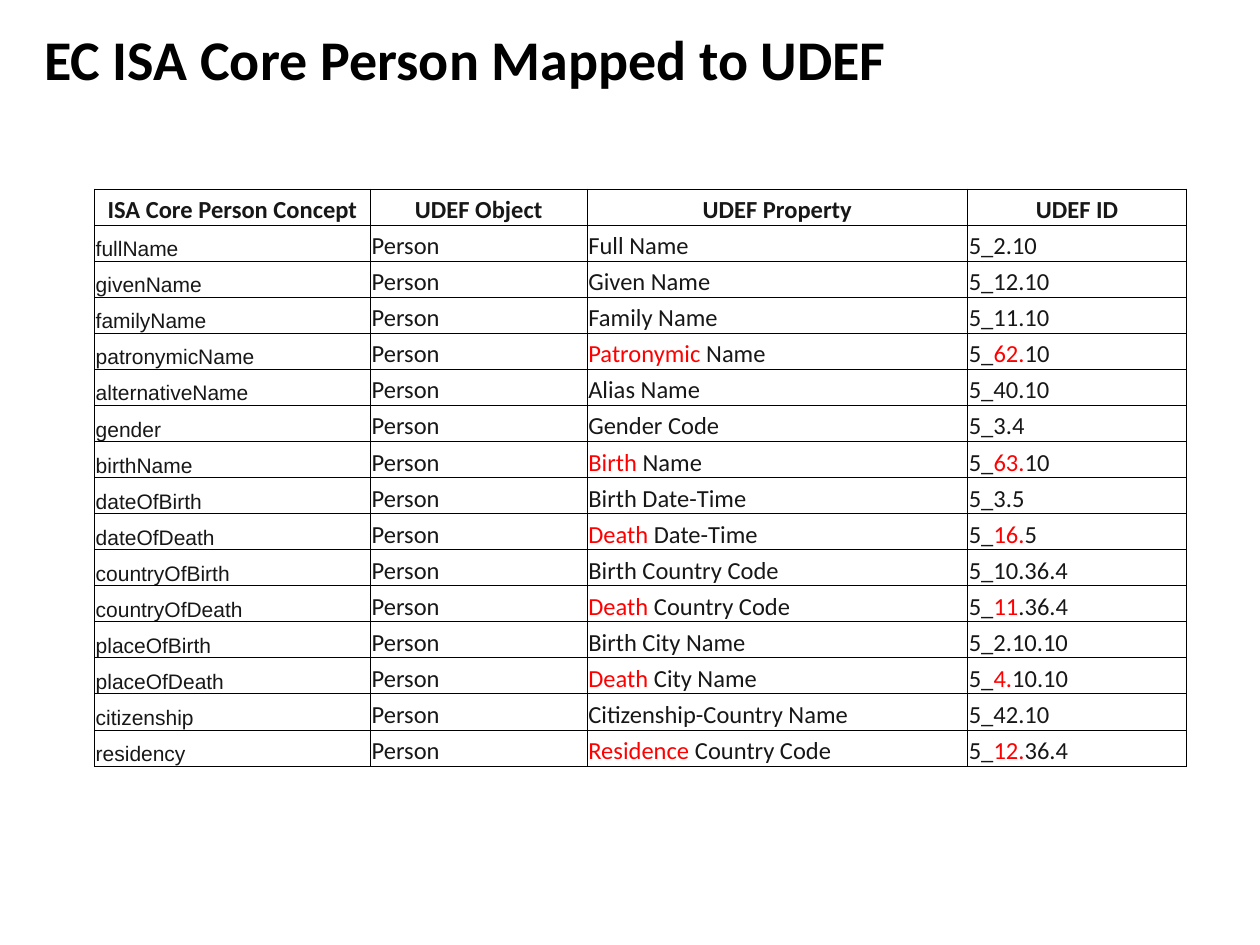
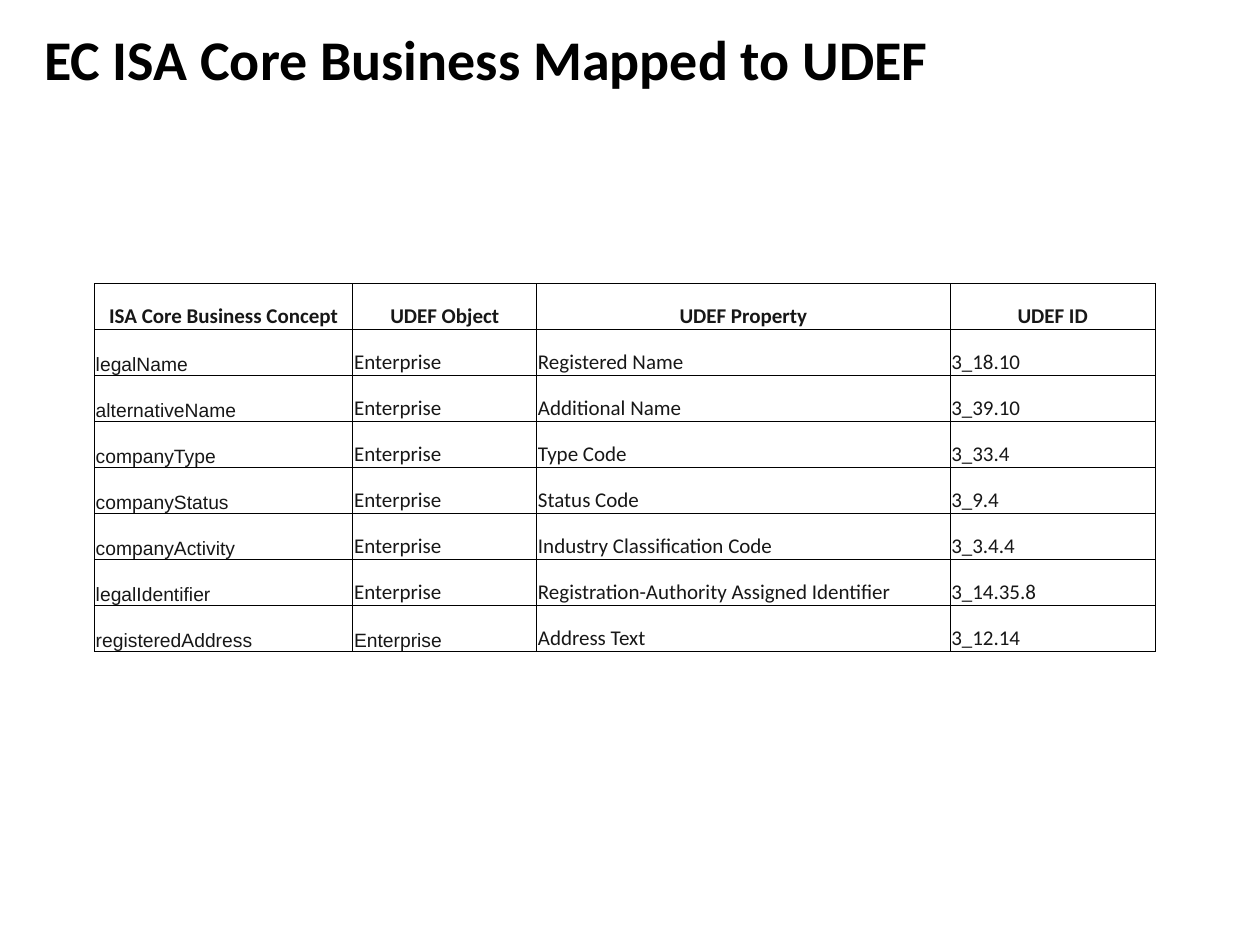
"""Build two slides that map ISA core vocabularies to UDEF."""
from dataclasses import dataclass

from lxml.etree import SubElement as Sub
from pptx import Presentation
from pptx.dml.color import RGBColor
from pptx.enum.text import MSO_ANCHOR as Anchor, PP_ALIGN as Align
from pptx.oxml.ns import qn
from pptx.util import Inches, Pt

WIDE, HIGH = Inches(10), Inches(7.5)
BLACK = RGBColor(0, 0, 0)
INK = RGBColor(0x17, 0x17, 0x17)
RED = RGBColor(0xFF, 0, 0)
WHITE = RGBColor(0xFF, 0xFF, 0xFF)
HEAD, CODE = "Calibri", "Arial"
CELL = {
    "vertical_anchor": Anchor.BOTTOM,
    "margin_left": Inches(0.01),
    "margin_right": Inches(0.01),
    "margin_top": Inches(0.01),
    "margin_bottom": 0,
}


@dataclass(frozen=True)
class Map:
    """A mapping table; lengths are percentages of the slide's size."""
    topic: str
    thing: str
    top: float
    row: float
    cols: tuple[float, ...]
    size: int
    small: int
    rows: tuple[tuple[str, str, str], ...]
    odd: tuple[tuple[int, int], ...] = ()

    def grid(self) -> list[tuple[str, ...]]:
        """Return the header and body as rows of four texts."""
        head = (f"ISA Core {self.topic} Concept", "UDEF Object", "UDEF Property", "UDEF ID")
        return [head] + [(name, self.thing, prop, code) for name, prop, code in self.rows]


MAPS = (
    Map("Person", "Person", 20, 3.82, (21.9, 17.2, 30.2, 17.4), 14, 12, (
        ("fullName", "Full Name", "5_2.10"),
        ("givenName", "Given Name", "5_12.10"),
        ("familyName", "Family Name", "5_11.10"),
        ("patronymicName", "[Patronymic] Name", "5_[62.]10"),
        ("alternativeName", "Alias Name", "5_40.10"),
        ("gender", "Gender Code", "5_3.4"),
        ("birthName", "[Birth] Name", "5_[63.]10"),
        ("dateOfBirth", "Birth Date-Time", "5_3.5"),
        ("dateOfDeath", "[Death] Date-Time", "5_[16.]5"),
        ("countryOfBirth", "Birth Country Code", "5_10.36.4"),
        ("countryOfDeath", "[Death] Country Code", "5_[11].36.4"),
        ("placeOfBirth", "Birth City Name", "5_2.10.10"),
        ("placeOfDeath", "[Death] City Name", "5_[4.]10.10"),
        ("citizenship", "Citizenship-Country Name", "5_42.10"),
        ("residency", "[Residence] Country Code", "5_[12.]36.4"),
    )),
    Map("Business", "Enterprise", 30, 4.87, (20.5, 14.6, 32.8, 16.3), 12, 11, (
        ("legalName", "Registered Name", "3_18.10"),
        ("alternativeName", "Additional Name", "3_39.10"),
        ("companyType", "Type Code", "3_33.4"),
        ("companyStatus", "Status Code", "3_9.4"),
        ("companyActivity", "Industry Classification Code", "3_3.4.4"),
        ("legalIdentifier", "Registration-Authority Assigned Identifier", "3_14.35.8"),
        ("registeredAddress", "Address Text", "3_12.14"),
    ), odd=((7, 1),)),
)


def across(share: float) -> int:
    """Turn a percentage of the width into a length."""
    return round(WIDE * share / 100)


def down(share: float) -> int:
    """Turn a percentage of the height into a length."""
    return round(HIGH * share / 100)


def assign(item, values: dict) -> None:
    """Set each named attribute of an item."""
    for key, value in values.items():
        setattr(item, key, value)


def write(para, text: str, face: str, size: int, bold: bool, ink: RGBColor) -> None:
    """Write text as runs, with bracketed parts in red."""
    for spot, part in enumerate(text.replace("]", "[").split("[")):
        if part:
            run = para.add_run()
            run.text = part
            assign(run.font, {"name": face, "size": Pt(size), "bold": bold})
            run.font.color.rgb = RED if spot % 2 else ink


def border(cell) -> None:
    """Draw a thin black line on all four sides of a cell."""
    props = cell._tc.get_or_add_tcPr()
    for side in ("lnL", "lnR", "lnT", "lnB"):
        line = Sub(props, qn(f"a:{side}"), w=str(Pt(0.5)))
        Sub(Sub(line, qn("a:solidFill")), qn("a:srgbClr"), val=str(BLACK))


def add_title(slide, text: str) -> None:
    """Place and format the slide's title."""
    title = slide.shapes.title
    assign(title, {"left": across(2.5), "top": down(1.07),
                   "width": across(95), "height": down(10.13)})
    title.text_frame.vertical_anchor = Anchor.MIDDLE
    para = title.text_frame.paragraphs[0]
    para.alignment = Align.LEFT
    write(para, text, HEAD, 32, True, BLACK)


def add_map(slide, plan: Map) -> None:
    """Draw a mapping table."""
    grid = plan.grid()
    table = slide.shapes.add_table(
        len(grid), len(plan.cols), across(7.5), down(plan.top),
        across(sum(plan.cols)), down(plan.row * len(grid))).table
    assign(table, {"first_row": False, "horz_banding": False})
    for col, share in zip(table.columns, plan.cols):
        col.width = across(share)
    for r, texts in enumerate(grid):
        for c, text in enumerate(texts):
            cell = table.cell(r, c)
            head = r == 0
            code = (not head and c == 0) or (r, c) in plan.odd
            assign(cell, CELL)
            border(cell)
            if code:
                cell.fill.background()
            else:
                cell.fill.solid()
                cell.fill.fore_color.rgb = WHITE
            para = cell.text_frame.paragraphs[0]
            para.alignment = Align.CENTER if head else Align.LEFT
            face, size = (CODE, plan.small) if code else (HEAD, plan.size)
            write(para, text, face, size, head, INK)


def main() -> None:
    """Build and save the deck."""
    deck = Presentation()
    assign(deck, {"slide_width": WIDE, "slide_height": HIGH})
    for plan in MAPS:
        slide = deck.slides.add_slide(deck.slide_layouts[5])
        add_title(slide, f"EC ISA Core {plan.topic} Mapped to UDEF")
        add_map(slide, plan)
    deck.save("out.pptx")


if __name__ == "__main__":
    main()
